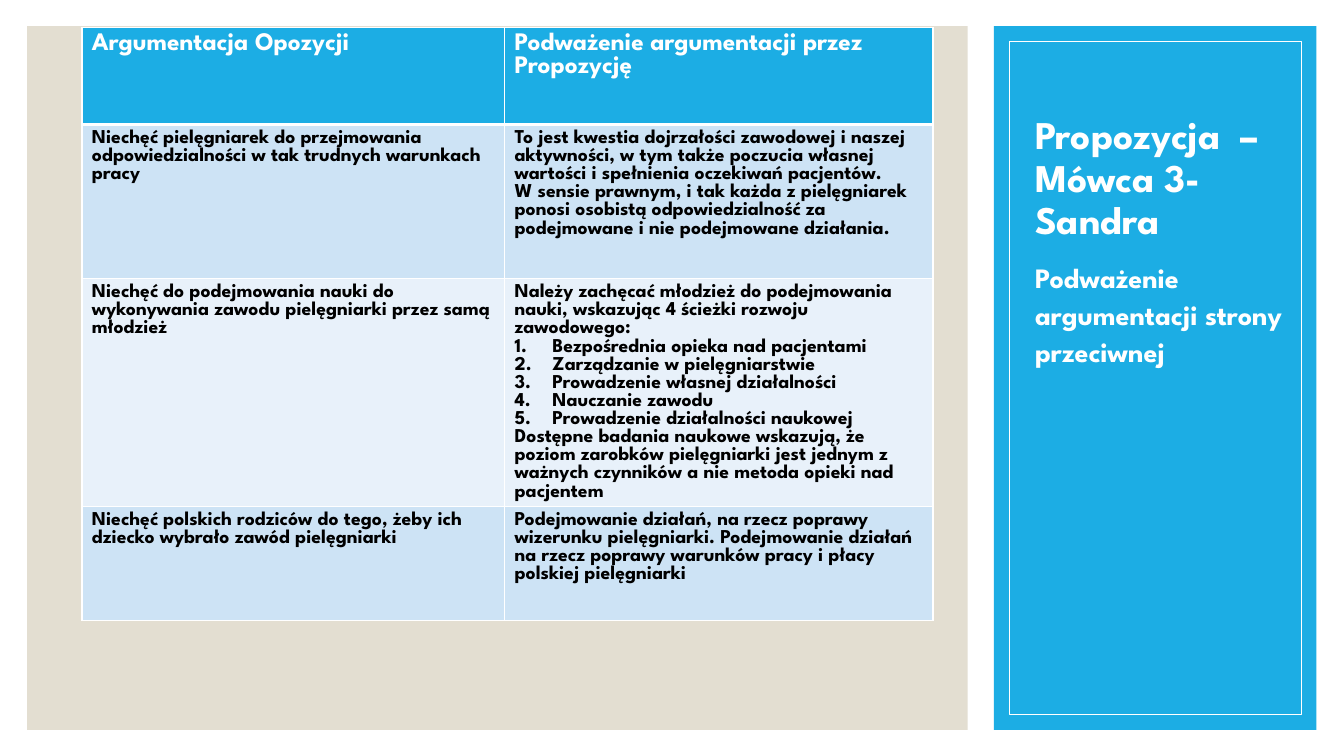
import pptx
import pptx.util
import pptx.dml.color
import pptx.enum.shapes
import pptx.enum.text
import pptx.oxml
import pptx.oxml.ns

Pt = pptx.util.Pt
RGB = pptx.dml.color.RGBColor
ANCHOR = pptx.enum.text.MSO_ANCHOR
qn = pptx.oxml.ns.qn

WHITE = RGB(0xFF, 0xFF, 0xFF)
BLACK = RGB(0, 0, 0)
BLUE = RGB(0x1C, 0xAD, 0xE4)
SAND = RGB(0xE3, 0xDE, 0xD1)
BAND_DARK = RGB(0xCD, 0xE3, 0xF5)
BAND_LIGHT = RGB(0xE8, 0xF1, 0xFA)
FONT = "League Spartan"

COLUMN_WIDTHS = (301.9, 306)
ROW_HEIGHTS = (69.5, 110.2, 162.5, 81.4)
NUMBERED = (
    "Bezpośrednia opieka nad pacjentami",
    "Zarządzanie w pielęgniarstwie",
    "Prowadzenie własnej działalności",
    "Nauczanie zawodu",
    "Prowadzenie działalności naukowej",
)
ROWS = (
    (("Argumentacja Opozycji",),
     ("Podważenie argumentacji przez Propozycję",)),
    (("Niechęć pielęgniarek do przejmowania odpowiedzialności w tak trudnych "
      "warunkach pracy",),
     ("To jest kwestia dojrzałości zawodowej i naszej aktywności, w tym także "
      "poczucia własnej wartości i spełnienia oczekiwań pacjentów.",
      "W sensie prawnym, i tak każda z pielęgniarek ponosi osobistą "
      "odpowiedzialność za podejmowane i nie podejmowane działania.")),
    (("Niechęć do podejmowania nauki do wykonywania zawodu pielęgniarki przez "
      "samą młodzież",),
     ("Należy zachęcać młodzież do podejmowania nauki, wskazując 4 ścieżki "
      "rozwoju zawodowego:",
      *NUMBERED,
      "Dostępne badania naukowe wskazują, że poziom zarobków pielęgniarki jest "
      "jednym z ważnych czynników a nie metoda opieki nad pacjentem")),
    (("Niechęć polskich rodziców do tego, żeby ich dziecko wybrało zawód "
      "pielęgniarki",),
     ("Podejmowanie działań, na rzecz poprawy wizerunku pielęgniarki. "
      "Podejmowanie działań na rzecz poprawy warunków pracy i płacy polskiej "
      "pielęgniarki",)),
)


def set_all(target, values):
    for name, value in values.items():
        setattr(target, name, value)


def write(p, text, size, color):
    r = p.add_run()
    r.text = text
    set_all(r.font, {"name": FONT, "size": Pt(size), "bold": True})
    r.font.color.rgb = color


def add_panel(s, box, fill=None, line=None):
    sp = s.shapes.add_shape(pptx.enum.shapes.MSO_SHAPE.RECTANGLE, *map(Pt, box))
    sp.shadow.inherit = False
    if fill is None:
        sp.fill.background()
    else:
        sp.fill.solid()
        sp.fill.fore_color.rgb = fill
    if line is None:
        sp.line.fill.background()
    else:
        sp.line.color.rgb = line
        sp.line.width = Pt(0.5)


def set_bullet(p, indent, tag, **attributes):
    pPr = p._p.get_or_add_pPr()
    pPr.set("marL", str(Pt(indent)))
    pPr.set("indent", str(-Pt(indent)))
    bullet = pptx.oxml.parse_xml(f"<a:{tag} {pptx.oxml.ns.nsdecls('a')}/>")
    for name, value in attributes.items():
        bullet.set(name, value)
    pPr.append(bullet)


def fill_placeholder(sp, box, text, size, anchor, paragraph_format):
    """Place the text in the placeholder and bring it in front of the panels."""
    set_all(sp, dict(zip(("left", "top", "width", "height"), map(Pt, box))))
    tf = sp.text_frame
    set_all(tf, {"word_wrap": True, "vertical_anchor": anchor,
                 "auto_size": pptx.enum.text.MSO_AUTO_SIZE.NONE})
    p = tf.paragraphs[0]
    set_all(p, {"alignment": pptx.enum.text.PP_ALIGN.LEFT, **paragraph_format})
    set_bullet(p, 0, "buNone")
    write(p, text, size, WHITE)
    sp.element.getparent().append(sp.element)


def set_borders(cell, top, bottom):
    tcPr = cell._tc.get_or_add_tcPr()
    widths = {"lnL": 1, "lnR": 1, "lnT": top, "lnB": bottom}
    for i, (tag, width) in enumerate(widths.items()):
        tcPr.insert(i, pptx.oxml.parse_xml(
            f'<a:{tag} {pptx.oxml.ns.nsdecls("a")} w="{Pt(width)}"><a:solidFill>'
            f'<a:srgbClr val="{WHITE}"/></a:solidFill></a:{tag}>'))


def fill_cell(cell, paragraphs, size, color, fill):
    cell.fill.solid()
    cell.fill.fore_color.rgb = fill
    tf = cell.text_frame
    for i, text in enumerate(paragraphs):
        p = tf.add_paragraph() if i else tf.paragraphs[0]
        if text in NUMBERED:
            set_bullet(p, 27, "buAutoNum", type="arabicPeriod")
        write(p, text, size, color)


def add_arguments_table(s):
    frame = s.shapes.add_table(len(ROWS), len(COLUMN_WIDTHS), Pt(58.5), Pt(19.5),
                               Pt(sum(COLUMN_WIDTHS)), Pt(sum(ROW_HEIGHTS)))
    table = frame.table
    for column, width in zip(table.columns, COLUMN_WIDTHS):
        column.width = Pt(width)
    for i, (height, row) in enumerate(zip(ROW_HEIGHTS, ROWS)):
        table.rows[i].height = Pt(height)
        if i == 0:
            style = (18, WHITE, BLUE)
        else:
            style = (14, BLACK, BAND_DARK if i % 2 else BAND_LIGHT)
        for j, paragraphs in enumerate(row):
            cell = table.cell(i, j)
            fill_cell(cell, paragraphs, *style)
            set_borders(cell, top=3 if i == 1 else 1, bottom=3 if i == 0 else 1)


def main():
    prs = pptx.Presentation()
    prs.slide_width, prs.slide_height = Pt(960), Pt(540)
    s = prs.slides.add_slide(prs.slide_layouts[1])
    add_panel(s, (19.4, 18.7, 671.8, 502.6), fill=SAND)
    add_panel(s, (710, 18.7, 230.4, 502.6), fill=BLUE)
    add_panel(s, (720.7, 29.5, 208.8, 481), line=WHITE)
    fill_placeholder(s.shapes.title, (732.2, 47.5, 191.5, 129.6),
                     "Propozycja  – Mówca 3- Sandra", 28, ANCHOR.BOTTOM,
                     {"line_spacing": 0.9})
    fill_placeholder(s.placeholders[1], (732.2, 180, 191.5, 275.8),
                     "Podważenie argumentacji strony przeciwnej", 20, ANCHOR.TOP,
                     {"line_spacing": 1.1, "space_before": Pt(8)})
    add_arguments_table(s)
    prs.save("out.pptx")


if __name__ == "__main__":
    main()
